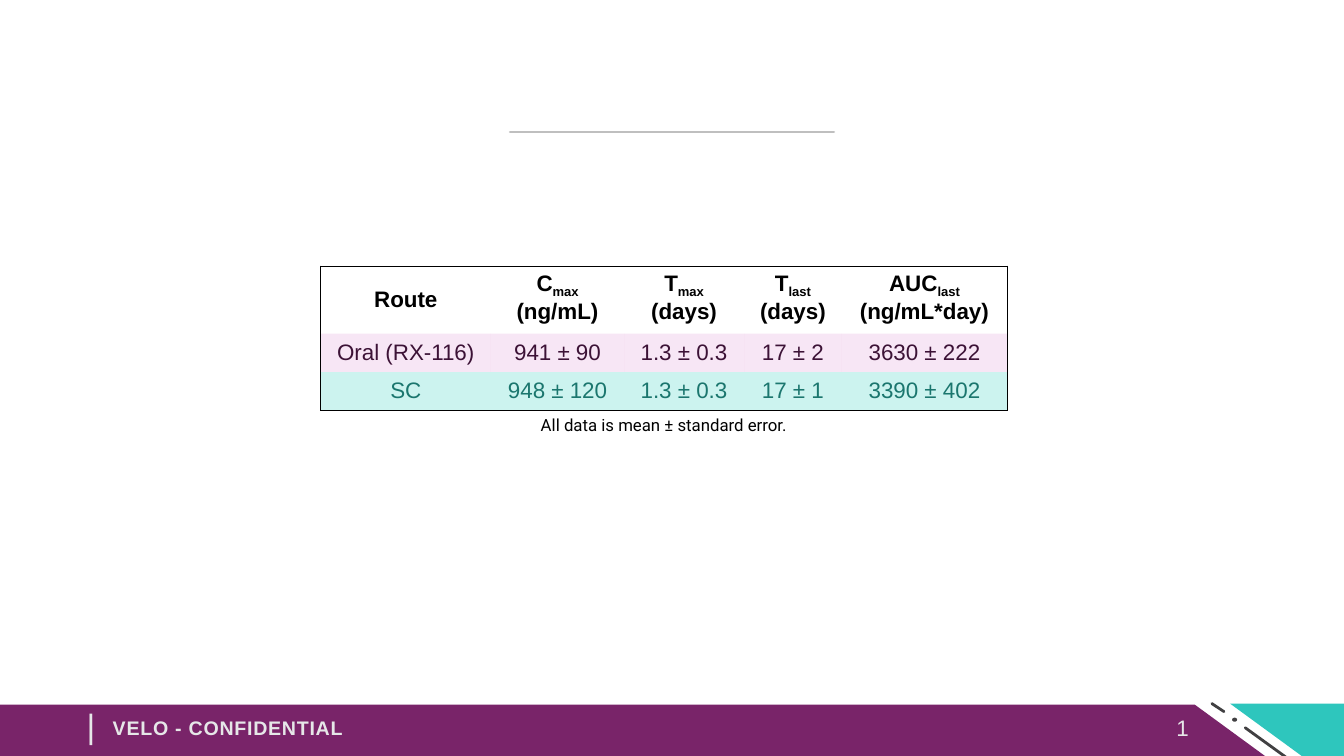
from lxml import etree
from pptx import Presentation
from pptx.dml.color import RGBColor
from pptx.enum.shapes import MSO_CONNECTOR, MSO_SHAPE
from pptx.enum.text import MSO_ANCHOR, PP_ALIGN
from pptx.oxml.ns import qn
from pptx.util import Inches, Pt

LEFT, MID, RIGHT = PP_ALIGN.LEFT, PP_ALIGN.CENTER, PP_ALIGN.RIGHT
TOP, MIDDLE = MSO_ANCHOR.TOP, MSO_ANCHOR.MIDDLE
STRAIGHT, OVAL = MSO_CONNECTOR.STRAIGHT, MSO_SHAPE.OVAL

BLACK = RGBColor(0, 0, 0)
WHITE = RGBColor(0xFF, 0xFF, 0xFF)
TEAL = RGBColor(0x2E, 0xC6, 0xBD)
PURPLE = RGBColor(0x79, 0x24, 0x69)
PALE = RGBColor(0xE6, 0xE7, 0xE8)
DARK = RGBColor(0x41, 0x40, 0x42)
GREY = RGBColor(0xBF, 0xBF, 0xBF)
PLUM = RGBColor(0x3C, 0x12, 0x36)
PINK = RGBColor(0xDA, 0x82, 0xCD)
PINE = RGBColor(0x1B, 0x76, 0x6E)
MINT = RGBColor(0xCC, 0xF3, 0xEF)

HEADS = [("Route",), ("C", "max", "(ng/mL)"), ("T", "max", "(days)"),
         ("T", "last", "(days)"), ("AUC", "last", "(ng/mL*day)")]
ORAL = ["Oral (RX-116)", "941 ± 90", "1.3 ± 0.3", "17 ± 2", "3630 ± 222"]
SHOT = ["SC", "948 ± 120", "1.3 ± 0.3", "17 ± 1", "3390 ± 402"]
NOTE = "All data is mean ± standard error."
COLS = [1.69, 1.32, 1.19, 0.97, 1.64]
ROWS = [0.67, 0.38, 0.38, 0.28]


def style(run, size, color, bold=False, font="Arial"):
    run.font.size = Pt(size)
    run.font.name = font
    run.font.bold = bold
    run.font.color.rgb = color


def label(slide, box, text, size, align=LEFT, bold=False, wrap=True):
    shape = slide.shapes.add_textbox(*map(Inches, box))
    frame = shape.text_frame
    frame.word_wrap = wrap
    frame.vertical_anchor = MIDDLE
    frame.text = text
    para = frame.paragraphs[0]
    para.alignment = align
    style(para.runs[0], size, PALE, bold)
    return para.runs[0]


def stroke(slide, start, end, color):
    """Draw a round-ended line without a shadow."""
    line = slide.shapes.add_connector(STRAIGHT, *map(Inches, start + end))
    line.line.color.rgb = color
    line.line.width = Pt(2)
    line.line._get_or_add_ln().set("cap", "rnd")
    etree.SubElement(line._element.spPr, qn("a:effectLst"))


def paint(shape, color):
    shape.shadow.inherit = False
    shape.fill.solid()
    shape.fill.fore_color.rgb = color
    shape.line.fill.background()


def panel(slide, points, color):
    pen = slide.shapes.build_freeform(
        *map(Inches, points[0]), scale=1.0)
    pen.add_line_segments([tuple(map(Inches, p)) for p in points[1:]])
    paint(pen.convert_to_shape(), color)


def footer(slide, left, top):
    """Build the band whose top left corner on the slide is given."""
    def at(x, y):
        return left + x, top + y

    panel(slide, [at(12.2, 0), at(13.38, 0), at(13.54, 0.88),
                  at(13.39, 0.87)], TEAL)
    panel(slide, [at(11.85, 0.01), at(-0.49, 0.01), at(-0.49, 0.92),
                  at(13.08, 0.91)], PURPLE)
    label(slide, at(0.76, -0.04) + (0.29, 0.5), "|", 24, wrap=False)
    stroke(slide, at(12.02, 0), at(12.14, 0.08), DARK)
    dot = slide.shapes.add_shape(
        OVAL, *map(Inches, at(12.22, 0.14) + (0.05, 0.04)))
    paint(dot, DARK)
    stroke(slide, at(12.35, 0.24), at(13, 0.71), DARK)
    label(slide, at(8.89, 0.04) + (3, 0.4), "1", 16, RIGHT)
    mark = label(slide, at(1.02, 0.04) + (2.87, 0.4),
                 "VELO - CONFIDENTIAL", 14, bold=True)
    mark._r.get_or_add_rPr().set("spc", "50")


def border(cell, sides):
    """Give the named sides a black line and the others none."""
    props = cell._tc.get_or_add_tcPr()
    for spot, side in enumerate("LRTB"):
        edge = etree.Element(qn("a:ln" + side), w=str(Pt(1)))
        if side in sides:
            fill = etree.SubElement(edge, qn("a:solidFill"))
            etree.SubElement(fill, qn("a:srgbClr"), val=str(BLACK))
        else:
            etree.SubElement(edge, qn("a:noFill"))
        props.insert(spot, edge)


def write(cell, text, size, color, font="Arial"):
    cell.text_frame.text = text
    cell.vertical_anchor = MIDDLE
    para = cell.text_frame.paragraphs[0]
    para.alignment = MID
    style(para.runs[0], size, color, font=font)


def head(cell, name, sub=None, unit=None):
    write(cell, name, 16, BLACK)
    cell.fill.background()
    first = cell.text_frame.paragraphs[0]
    first.runs[0].font.bold = True
    if sub:
        cell.vertical_anchor = TOP
        low = first.add_run()
        low.text = sub
        style(low, 16, BLACK, True)
        low._r.get_or_add_rPr().set("baseline", "-25000")
        para = cell.text_frame.add_paragraph()
        para.text = unit
        para.alignment = MID
        style(para.runs[0], 16, BLACK, True)


def tint(cell, color, alpha=100):
    cell.fill.solid()
    cell.fill.fore_color.rgb = color
    if alpha < 100:
        tone = cell._tc.tcPr.find(".//" + qn("a:srgbClr"))
        etree.SubElement(tone, qn("a:alpha"), val=str(alpha * 1000))


def results(slide, left, top):
    frame = slide.shapes.add_table(
        len(ROWS), len(COLS),
        *map(Inches, (left, top, sum(COLS), sum(ROWS))))
    table = frame.table
    table.first_row = table.horz_banding = False
    for col, width in zip(table.columns, COLS):
        col.width = Inches(width)
    for row, height in zip(table.rows, ROWS):
        row.height = Inches(height)

    for c, parts in enumerate(HEADS):
        head(table.cell(0, c), *parts)
    bands = [(ORAL, PLUM, PINK, 20), (SHOT, PINE, MINT, 100)]
    for r, (values, ink, color, alpha) in enumerate(bands, 1):
        for c, value in enumerate(values):
            write(table.cell(r, c), value, 16, ink)
            tint(table.cell(r, c), color, alpha)

    last = len(COLS) - 1
    foot = len(ROWS) - 1
    table.cell(foot, 0).merge(table.cell(foot, last))
    write(table.cell(foot, 0), NOTE, 12, BLACK, "Roboto")
    for c in range(len(COLS)):
        tint(table.cell(foot, c), WHITE)
        for r, ends in enumerate(("T", "", "B", "T")):
            sides = ends
            if r < foot:
                sides += {0: "L", last: "R"}.get(c, "")
            border(table.cell(r, c), sides)


def main():
    deck = Presentation()
    deck.slide_width, deck.slide_height = Inches(13.33), Inches(7.5)
    slide = deck.slides.add_slide(deck.slide_layouts[6])
    footer(slide, 0, 6.98)
    stroke(slide, (5.06, 1.31), (8.27, 1.31), GREY)
    results(slide, 3.18, 2.64)
    deck.save("out.pptx")


if __name__ == "__main__":
    main()
